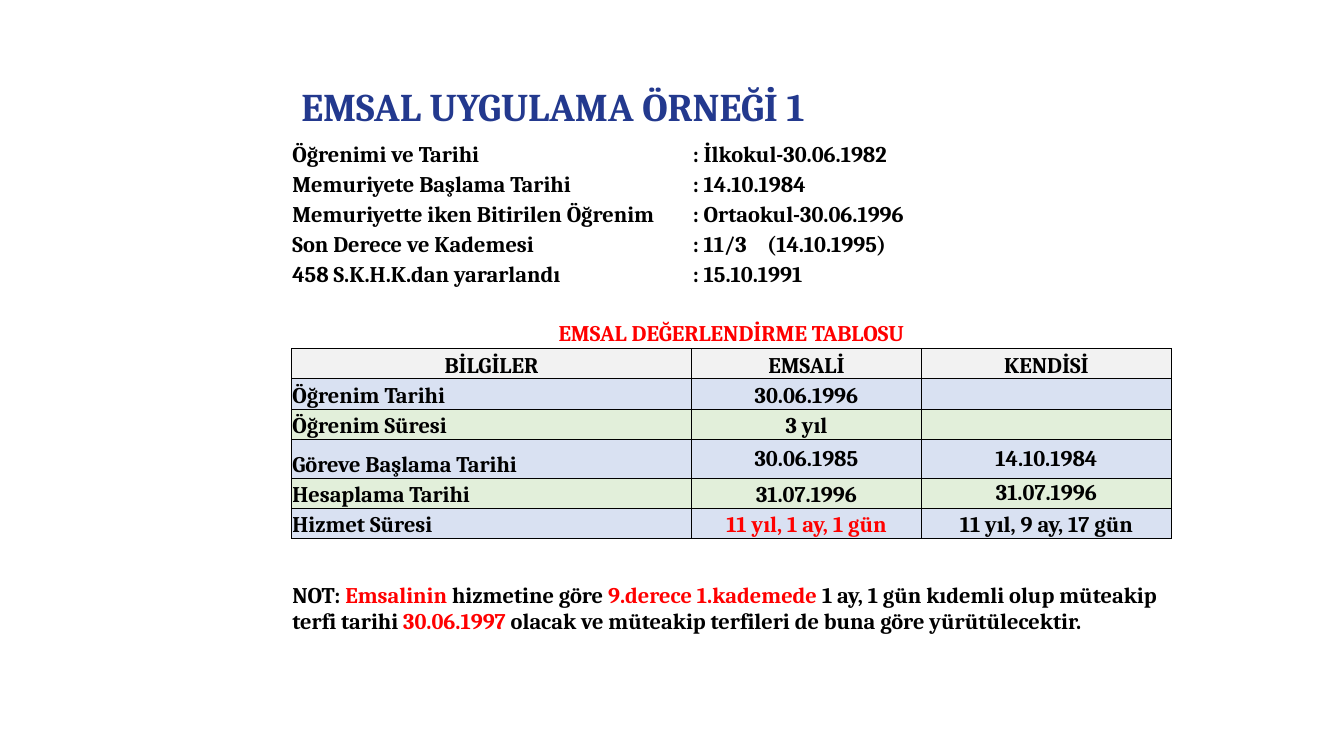
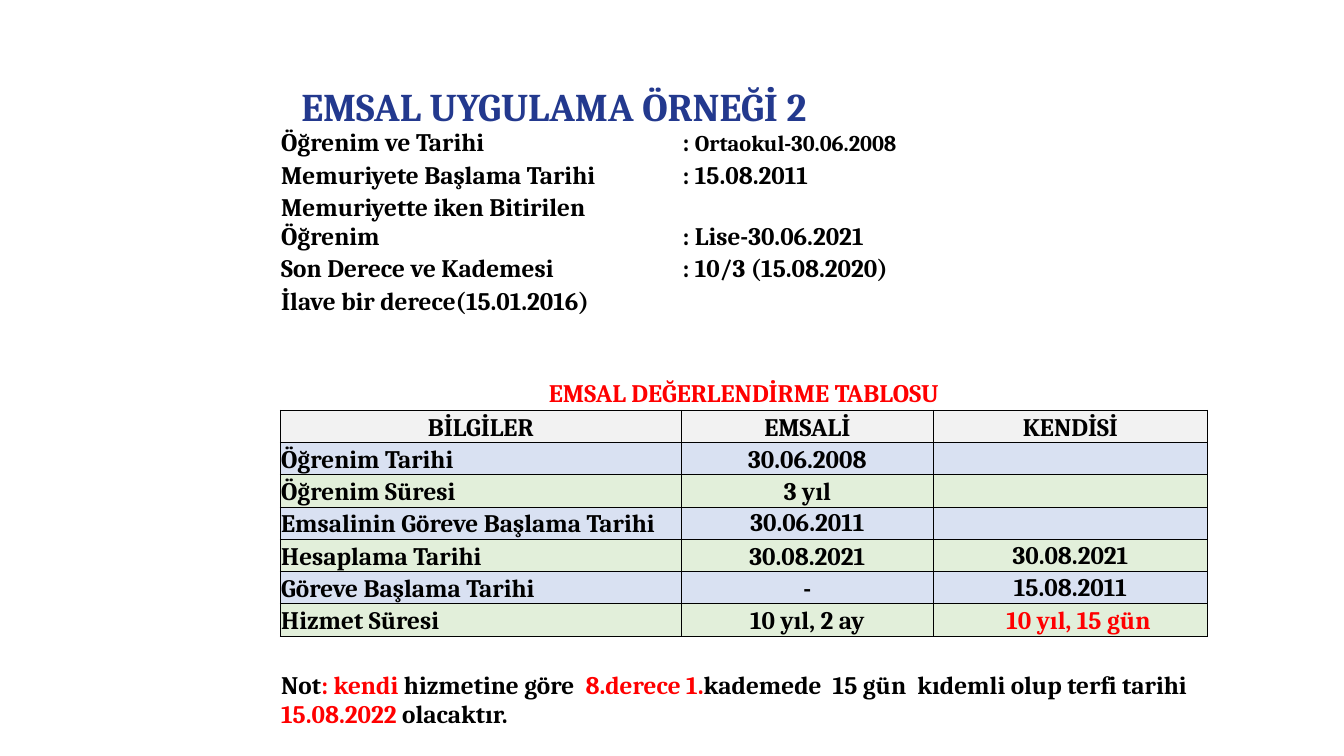
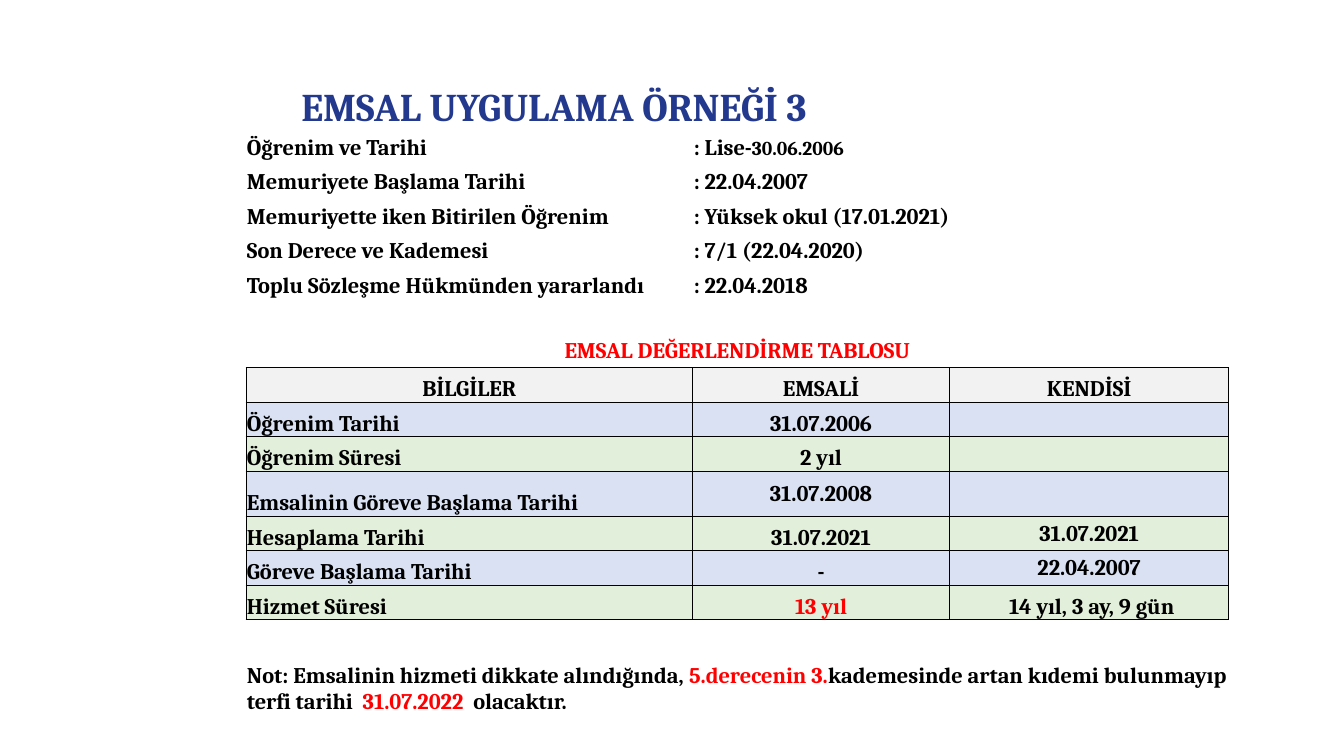
from lxml import etree
from pptx import Presentation
from pptx.dml.color import RGBColor
from pptx.enum.text import MSO_ANCHOR, MSO_AUTO_SIZE, PP_ALIGN
from pptx.oxml.ns import qn
from pptx.util import Inches, Pt

BOTTOM, MIDDLE = MSO_ANCHOR.BOTTOM, MSO_ANCHOR.MIDDLE
LEFT, CENTER = PP_ALIGN.LEFT, PP_ALIGN.CENTER
GROW = MSO_AUTO_SIZE.SHAPE_TO_FIT_TEXT
FONT = "Cambria"
BLACK, RED, NAVY = "000000", "FF0000", "23398E"
HEADER_FILL, BANDS = "F2F2F2", ("D9E1F2", "E2EFDA")
PLAIN_TABLE = "{2D5ABB26-0587-4C30-8999-92F81FD0307C}"
HEADINGS = ("BİLGİLER", "EMSALİ", "KENDİSİ")
START_ROW = 2


def color(value):
    """Turn a hex string into a colour."""
    return RGBColor.from_string(value)


class Deck:
    """Hold the shared style and the current slide; places are percent of the slide."""

    def __init__(self):
        """Start an empty widescreen deck."""
        self.show = Presentation()
        self.show.slide_width = Inches(13.33)
        self.show.slide_height = Inches(7.5)
        self.slide = None

    def page(self):
        """Add a blank slide and make it current."""
        self.slide = self.show.slides.add_slide(self.show.slide_layouts[6])

    def place(self, left, top, width, height):
        """Turn percentages into slide lengths."""
        across, down = self.show.slide_width / 100, self.show.slide_height / 100
        return (round(left * across), round(top * down),
                round(width * across), round(height * down))

    def add_spans(self, paragraph, text, size, ink=BLACK, marked_ink=RED, marked_size=None):
        """Add bold text in which the parts between bars are marked."""
        for index, part in enumerate(text.split("|")):
            if not part:
                continue
            marked = index % 2 == 1
            span = paragraph.add_run()
            span.text = part
            span.font.name = FONT
            span.font.bold = True
            span.font.size = Pt(marked_size if marked and marked_size else size)
            span.font.color.rgb = color(marked_ink if marked else ink)

    def title(self, text):
        """Add the slide title."""
        box = self.slide.shapes.add_textbox(*self.place(21.68, 7.07, 78.3, 9.6))
        frame = box.text_frame
        frame.word_wrap = True
        frame.auto_size = GROW
        paragraph = frame.paragraphs[0]
        paragraph.line_spacing = 1.5
        self.add_spans(paragraph, text, 28, NAVY)

    def grid(self, place, columns, rows, size):
        """Add a plain table whose columns and rows share its size by weight."""
        left, top, width, height = self.place(*place)
        table = self.slide.shapes.add_table(
            len(rows), len(columns), left, top, width, height).table
        table.first_row = table.horz_banding = False
        table._tbl.tblPr.find(qn("a:tableStyleId")).text = PLAIN_TABLE
        for column, weight in zip(table.columns, columns):
            column.width = round(width * weight / sum(columns))
        for row, weight in zip(table.rows, rows):
            row.height = round(height * weight / sum(rows))
        for cell in table.iter_cells():
            cell.margin_left = cell.margin_right = cell.margin_top = Inches(0.01)
            cell.margin_bottom = 0
            cell.vertical_anchor = BOTTOM
            ending = cell.text_frame.paragraphs[0]._p.get_or_add_endParaRPr()
            ending.set("sz", str(size * 100))
        return table

    def cell(self, cell, text, size, align=LEFT, anchor=BOTTOM, **style):
        """Fill in one cell."""
        cell.vertical_anchor = anchor
        paragraph = cell.text_frame.paragraphs[0]
        paragraph.alignment = align
        if "\t" in text:
            stops = etree.SubElement(paragraph._p.get_or_add_pPr(), qn("a:tabLst"))
            etree.SubElement(stops, qn("a:tab"), pos=str(Inches(0.74)), algn="l")
        self.add_spans(paragraph, text, size, **style)

    def box(self, cell, fill):
        """Give a cell thin black borders and a fill."""
        properties = cell._tc.get_or_add_tcPr()
        for side in ("lnL", "lnR", "lnT", "lnB"):
            line = etree.SubElement(properties, qn("a:" + side), w=str(Pt(0.5)))
            solid = etree.SubElement(line, qn("a:solidFill"))
            etree.SubElement(solid, qn("a:srgbClr"), val=BLACK)
        cell.fill.solid()
        cell.fill.fore_color.rgb = color(fill)

    def example(self, title, place, columns, rows, size, facts, body, note, indent=0):
        """Build one worked example: facts, comparison table and note."""
        self.page()
        self.title(title)
        table = self.grid(place, columns, rows, size)
        for index, (label, value) in enumerate(facts):
            self.cell(table.cell(index, 0), label, size)
            self.cell(table.cell(index, 1), value, size,
                      marked_ink=BLACK, marked_size=size - 2)
        table.cell(2, 1).merge(table.cell(2, 2))

        caption = len(facts) + 1
        last = len(rows) - 1
        for index in (caption, last):
            table.cell(index, 0).merge(table.cell(index, 2))
        self.cell(table.cell(caption, 0), "EMSAL DEĞERLENDİRME TABLOSU",
                  size, CENTER, MIDDLE, ink=RED)
        self.cell(table.cell(last, 0), note, size, LEFT, MIDDLE)

        first = caption + 2
        for column, heading in enumerate(HEADINGS):
            header = table.cell(caption + 1, column)
            self.box(header, HEADER_FILL)
            self.cell(header, heading, size, CENTER)
        for index, values in enumerate(body):
            closing = index == len(body) - 1
            for column, value in enumerate(values):
                cell = table.cell(first + index, column)
                self.box(cell, BANDS[index % 2])
                raised = (column == 2 and not closing) or (column and index == START_ROW)
                self.cell(cell, value, size, CENTER if column else LEFT,
                          MIDDLE if raised else BOTTOM)
        table.cell(first + len(body) - 1, 2).margin_left = Inches(0.01 + indent)


def main():
    """Build the three examples."""
    deck = Deck()
    deck.example(
        "EMSAL UYGULAMA ÖRNEĞİ 1", (21.68, 18.27, 65.48, 67.73),
        (3.97, 2.28, 2.48), [1] * 10 + [1.3] + [1] * 3 + [2.7], 16,
        [("Öğrenimi ve Tarihi", ": İlkokul-30.06.1982"),
         ("Memuriyete Başlama Tarihi", ": 14.10.1984"),
         ("Memuriyette iken Bitirilen Öğrenim", ": Ortaokul-30.06.1996"),
         ("Son Derece ve Kademesi", ": 11/3\t(14.10.1995)"),
         ("458 S.K.H.K.dan yararlandı", ": 15.10.1991")],
        [("Öğrenim Tarihi", "30.06.1996", ""),
         ("Öğrenim Süresi", "3 yıl", ""),
         ("Göreve Başlama Tarihi", "30.06.1985", "14.10.1984"),
         ("Hesaplama Tarihi", "31.07.1996", "31.07.1996"),
         ("Hizmet Süresi", "|11 yıl, 1 ay, 1 gün|", "11 yıl, 9 ay, 17 gün")],
        "NOT: |Emsalinin |hizmetine göre |9.derece 1.kademede |1 ay, 1 gün kıdemli "
        "olup müteakip terfi tarihi |30.06.1997| olacak ve müteakip terfileri de "
        "buna göre yürütülecektir.")
    deck.example(
        "EMSAL UYGULAMA ÖRNEĞİ 2", (20.85, 16.67, 69, 80.27),
        (3.98, 2.5, 2.72), [1, 1, 1.9, 1, 1, 1.9] + [1] * 9 + [2], 18,
        [("Öğrenim ve Tarihi", ": |Ortaokul-30.06.2008|"),
         ("Memuriyete Başlama Tarihi", ": 15.08.2011"),
         ("Memuriyette iken Bitirilen Öğrenim", ": Lise-30.06.2021"),
         ("Son Derece ve Kademesi", ": 10/3 (15.08.2020)"),
         ("İlave bir derece(15.01.2016)", "")],
        [("Öğrenim Tarihi", "30.06.2008", ""),
         ("Öğrenim Süresi", "3 yıl", ""),
         ("Emsalinin Göreve Başlama Tarihi", "30.06.2011", ""),
         ("Hesaplama Tarihi", "30.08.2021", "30.08.2021"),
         ("Göreve Başlama Tarihi", "-", "15.08.2011"),
         ("Hizmet Süresi", "10 yıl, 2 ay", "|10 yıl, 15 gün|")],
        "Not|: kendi |hizmetine göre  |8.derece 1.|kademede  15 gün  kıdemli olup "
        "terfi tarihi |15.08.2022| olacaktır.", indent=0.16)
    deck.example(
        "EMSAL UYGULAMA ÖRNEĞİ 3", (18.3, 16.67, 73.13, 79.07),
        (4.43, 2.55, 2.77), [1] * 10 + [1.3] + [1] * 4 + [2], 16,
        [("Öğrenim ve Tarihi", ": Lise-|30.06.2006|"),
         ("Memuriyete Başlama Tarihi", ": 22.04.2007"),
         ("Memuriyette iken Bitirilen Öğrenim", ": Yüksek okul (17.01.2021)"),
         ("Son Derece ve Kademesi", ": 7/1 (22.04.2020)"),
         ("Toplu Sözleşme Hükmünden yararlandı", ": 22.04.2018")],
        [("Öğrenim Tarihi", "31.07.2006", ""),
         ("Öğrenim Süresi", "2 yıl", ""),
         ("Emsalinin Göreve Başlama Tarihi", "31.07.2008", ""),
         ("Hesaplama Tarihi", "31.07.2021", "31.07.2021"),
         ("Göreve Başlama Tarihi", "-", "22.04.2007"),
         ("Hizmet Süresi", "|13 yıl|", "14 yıl, 3 ay, 9 gün")],
        "Not: Emsalinin hizmeti dikkate alındığında, |5.derecenin 3.|kademesinde "
        "artan kıdemi bulunmayıp terfi tarihi  |31.07.2022|  olacaktır.", indent=0.05)
    deck.show.save("out.pptx")


if __name__ == "__main__":
    main()
